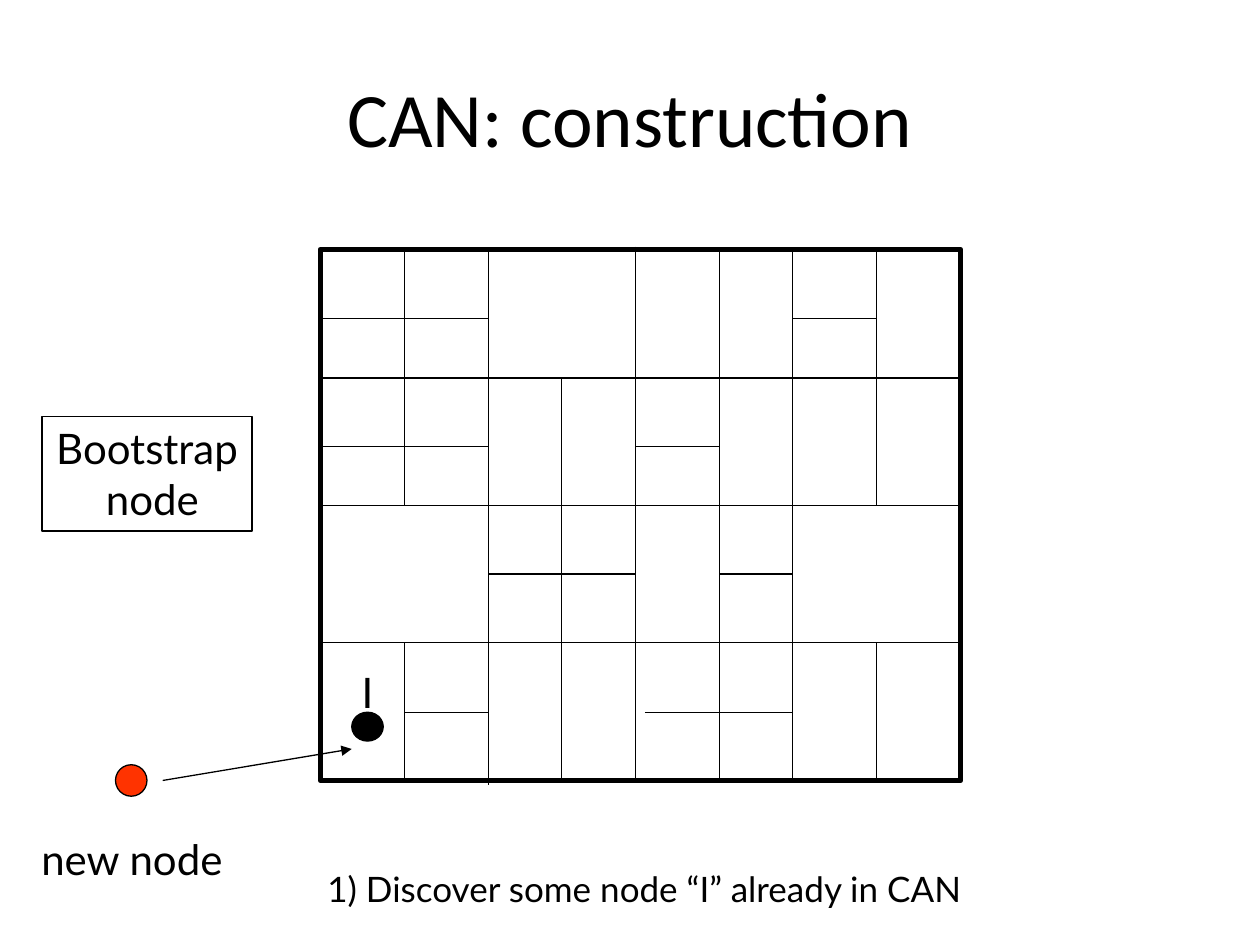
from typing import NamedTuple

from lxml.etree import SubElement
from pptx import Presentation
from pptx.dml.color import RGBColor
from pptx.enum.shapes import MSO_CONNECTOR as Link, MSO_SHAPE as Kind
from pptx.enum.text import MSO_ANCHOR as Anchor, MSO_AUTO_SIZE as Fit, PP_ALIGN as Align
from pptx.oxml.ns import qn
from pptx.util import Pt

BLACK, RED = "000000", "FF3300"

# Edges of the coordinate space, in points
COLS = [183, 231, 279, 321, 363, 411, 453, 501, 549]
ROWS = [142.5, 182, 216, 255, 289, 328, 367, 407, 446]


class Box(NamedTuple):
    x: float
    y: float
    w: float
    h: float


class Wall(NamedTuple):
    """Zone border on grid line `at`, between two crossing grid lines."""
    at: int
    start: int
    end: int
    trim: float = 0
    over: float = 0


UPRIGHT = [
    Wall(2, 0, 8, over=2.5), Wall(4, 0, 8, trim=-1.5, over=1.5), Wall(6, 0, 8),
    *(Wall(col, row, row + 2) for col in (1, 7) for row in (0, 2, 6)),
    *(Wall(3, row, row + 2) for row in (2, 4, 6)),
    *(Wall(5, row, row + 2) for row in (0, 2, 4, 6)),
]
LEVEL = [
    *(Wall(row, 0, 8) for row in (2, 4, 6)),
    Wall(1, 0, 2), Wall(1, 6, 7), Wall(3, 0, 2), Wall(3, 4, 5),
    Wall(5, 2, 4), Wall(5, 5, 6), Wall(7, 1, 2), Wall(7, 4, 6, trim=5.5),
]


def color(code: str) -> RGBColor:
    return RGBColor.from_string(code)


def draw_shape(host, kind: Kind, box: Box, fill: str | None = None, width: float = 0.75):
    shape = host.add_shape(kind, *map(Pt, box))
    shape.shadow.inherit = False
    if fill:
        shape.fill.solid()
        shape.fill.fore_color.rgb = color(fill)
    else:
        shape.fill.background()
    shape.line.color.rgb = color(BLACK)
    shape.line.width = Pt(width)
    return shape


def draw_line(host, x1: float, y1: float, x2: float, y2: float, arrow: bool = False) -> None:
    line = host.add_connector(Link.STRAIGHT, Pt(x1), Pt(y1), Pt(x2), Pt(y2))
    line.line.color.rgb = color(BLACK)
    line.line.width = Pt(0.75)
    if arrow:
        SubElement(line.line._get_or_add_ln(), qn("a:tailEnd"), type="triangle")
    SubElement(line._element.spPr, qn("a:effectLst"))


def put_text(shape, text: str, *, size: float = 24, font: str = "Lato",
             align: Align = Align.LEFT, anchor: Anchor = Anchor.TOP,
             wrap: bool = True, grow: bool = True) -> None:
    frame = shape.text_frame
    frame.word_wrap = wrap
    frame.auto_size = Fit.SHAPE_TO_FIT_TEXT if grow else Fit.NONE
    frame.vertical_anchor = anchor
    para = frame.paragraphs[0]
    para.text = text
    para.alignment = align
    for run in para.runs:
        run.font.size = Pt(size)
        run.font.name = font
        run.font.color.rgb = color(BLACK)


def add_text(host, box: Box, text: str, **look) -> None:
    put_text(host.add_textbox(*map(Pt, box)), text, **look)


def draw_space(host) -> None:
    """Draw the coordinate space with its zones and the known node I."""
    frame = Box(COLS[0], ROWS[0], COLS[-1] - COLS[0], ROWS[-1] - ROWS[0])
    draw_shape(host, Kind.RECTANGLE, frame, width=3)
    for wall in UPRIGHT:
        x = COLS[wall.at]
        draw_line(host, x, ROWS[wall.start] + wall.trim, x, ROWS[wall.end] + wall.over)
    for wall in LEVEL:
        y = ROWS[wall.at]
        draw_line(host, COLS[wall.start] + wall.trim, y, COLS[wall.end] + wall.over, y)
    draw_shape(host, Kind.OVAL, Box(201, 407, 18, 16.5), BLACK)
    add_text(host, Box(199.5, 377.5, 23.5, 36), "I", wrap=False)


def main() -> None:
    deck = Presentation()
    deck.slide_width, deck.slide_height = Pt(720), Pt(540)
    shapes = deck.slides.add_slide(deck.slide_layouts[6]).shapes

    draw_line(shapes, 93, 446, 201, 428, arrow=True)
    add_text(shapes, Box(36, 21.6, 648, 90), "CAN: construction", size=44,
             font="Calibri", align=Align.CENTER, anchor=Anchor.MIDDLE, grow=False)
    draw_shape(shapes, Kind.OVAL, Box(66, 437, 18, 18), RED)
    draw_space(shapes.add_group_shape().shapes)

    boot = draw_shape(shapes, Kind.RECTANGLE, Box(24, 238, 120, 65.5))
    put_text(boot, "Bootstrap\v node", align=Align.CENTER)
    add_text(shapes, Box(16.5, 473, 118, 36), "new node", wrap=False)
    add_text(shapes, Box(180, 492, 498, 31),
             "1) Discover some node “I” already in CAN", size=20)
    deck.save("out.pptx")


if __name__ == "__main__":
    main()
